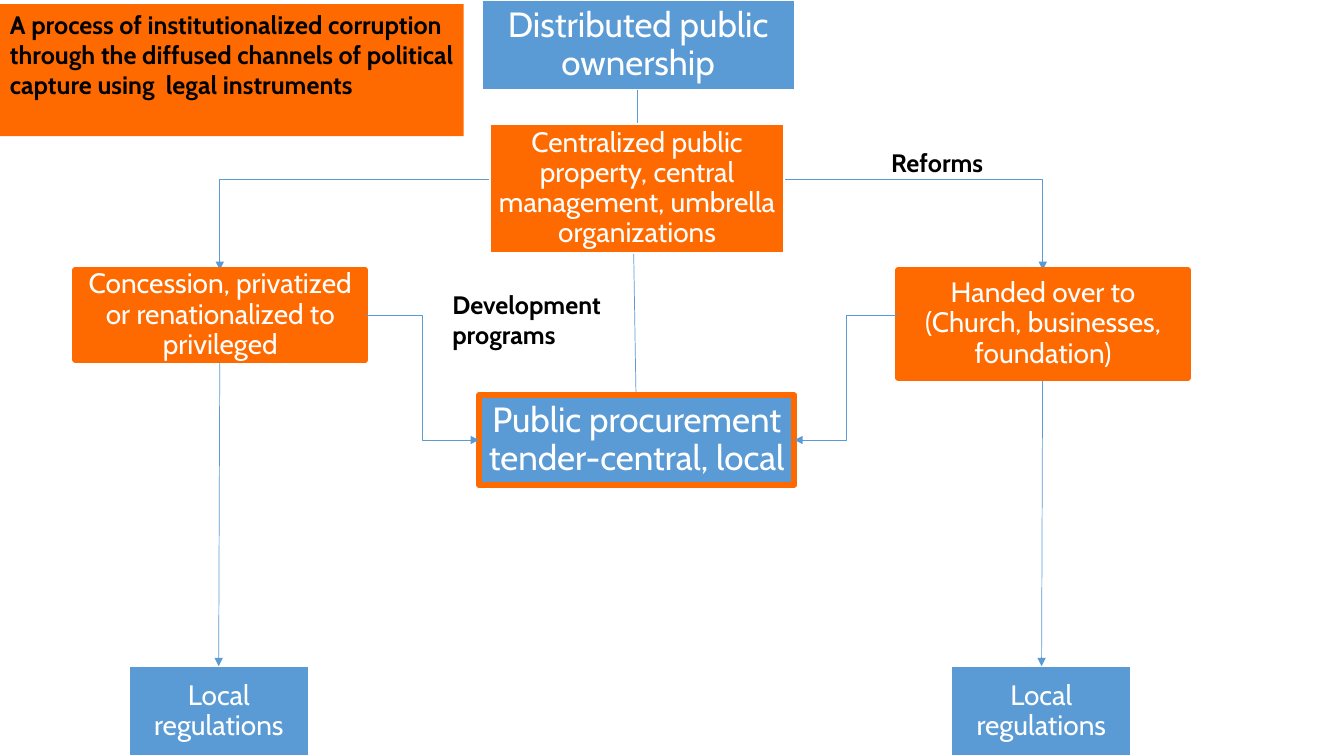
from lxml import etree
from pptx import Presentation
from pptx.dml.color import RGBColor
from pptx.enum.shapes import MSO_CONNECTOR, MSO_SHAPE
from pptx.enum.text import MSO_ANCHOR, PP_ALIGN
from pptx.oxml.ns import qn
from pptx.util import Pt

BLUE = RGBColor(0x5B, 0x9B, 0xD5)
ORANGE = RGBColor(0xFF, 0x6A, 0x00)
WHITE = RGBColor(0xFF, 0xFF, 0xFF)
BLACK = RGBColor(0x00, 0x00, 0x00)
RECTANGLE = MSO_SHAPE.RECTANGLE
STRAIGHT, ELBOW = MSO_CONNECTOR.STRAIGHT, MSO_CONNECTOR.ELBOW
TOP, MIDDLE = MSO_ANCHOR.TOP, MSO_ANCHOR.MIDDLE
LEFT, CENTER = PP_ALIGN.LEFT, PP_ALIGN.CENTER
FONT = "Cabin"

# text, (left, top, width, height), fill, (line colour, line width), text size
BOXES = [
    ("Distributed public ownership", (344.2, 0, 223.2, 64.1), BLUE, (WHITE, 1), 25),
    ("Centralized public property, central management, umbrella organizations",
     (350.1, 88.7, 210, 92), ORANGE, (WHITE, 1), 20),
    ("Concession, privatized or renationalized to privileged",
     (53.8, 192.9, 207.2, 64.1), ORANGE, (ORANGE, 4), 20),
    ("Handed over to (Church, businesses, foundation)",
     (641.5, 192.9, 207.2, 77), ORANGE, (ORANGE, 4), 20),
    ("Public procurement tender-central, local",
     (342.1, 282.3, 225.3, 64.1), BLUE, (ORANGE, 4), 25),
    ("Local regulations", (92.2, 475.9, 128.2, 64.1), BLUE, (WHITE, 1), 20),
    ("Local regulations", (679.7, 475.9, 128.2, 64.1), BLUE, (WHITE, 1), 20),
]

# text, (left, top, width, height), fill
NOTES = [
    ("A process of institutionalized corruption through the diffused channels of "
     "political capture using  legal instruments", (0, 2.9, 331.2, 94.3), ORANGE),
    ("Development programs", (316, 203, 135.4, 51.1), None),
    ("Reforms", (629.5, 101.5, 89.3, 51.1), None),
]

# start, end
DROPS_TO_OWNERS = [((455.4, 64.1), (157, 192.9)), ((455.4, 64.1), (744.8, 192.9))]
DROPS_TO_LOCAL = [((157, 257), (156.2, 475.9)), ((744.8, 257), (744, 475.9))]
TURNS_TO_TENDER = [((261, 225), (342.1, 314.3)), ((641.5, 225), (567.4, 314.3))]
CENTRAL_TO_TENDER = ((452.2, 152.6), (454.3, 282.3))


def write(shape, text, size, color, anchor, align):
    frame = shape.text_frame
    frame.word_wrap = True
    frame.vertical_anchor = anchor
    paragraph = frame.paragraphs[0]
    paragraph.text = text
    paragraph.alignment = align
    font = paragraph.font
    font.name, font.size, font.color.rgb = FONT, Pt(size), color
    return frame, paragraph


def add_box(shapes, text, place, fill, line, size):
    box = shapes.add_shape(RECTANGLE, *map(Pt, place))
    box.shadow.inherit = False
    box.fill.solid()
    box.fill.fore_color.rgb = fill
    box.line.color.rgb, box.line.width = line[0], Pt(line[1])
    frame, paragraph = write(box, text, size, WHITE, MIDDLE, CENTER)
    frame.margin_left = frame.margin_right = Pt(1.25)
    frame.margin_top = frame.margin_bottom = Pt(1.25)
    paragraph.line_spacing = 0.9


def add_note(shapes, text, place, fill):
    note = shapes.add_textbox(*map(Pt, place))
    if fill is not None:
        note.fill.solid()
        note.fill.fore_color.rgb = fill
    _, paragraph = write(note, text, 18, BLACK, TOP, LEFT)
    paragraph.font.bold = True


def add_link(shapes, kind, start, end, arrow=True):
    link = shapes.add_connector(kind, *map(Pt, (*start, *end)))
    link.line.color.rgb, link.line.width = BLUE, Pt(0.5)
    properties = link._element.spPr
    if arrow:
        etree.SubElement(properties.find(qn("a:ln")), qn("a:tailEnd"), type="triangle")
    etree.SubElement(properties, qn("a:effectLst"))
    return link


def add_drop(shapes, start, end):
    """Elbow that leaves and arrives vertically: a quarter-turned horizontal one."""
    (x1, y1), (x2, y2) = start, end
    middle_x, middle_y = (x1 + x2) / 2, (y1 + y2) / 2
    half_width, half_height = (y2 - y1) / 2, abs(x2 - x1) / 2
    degrees = 90
    if x2 > x1:
        half_width, degrees = -half_width, 270
    link = add_link(shapes, ELBOW,
                    (middle_x - half_width, middle_y - half_height),
                    (middle_x + half_width, middle_y + half_height))
    link._element.spPr.find(qn("a:xfrm")).set("rot", str(degrees * 60000))


def main():
    deck = Presentation()
    deck.slide_width, deck.slide_height = Pt(960), Pt(540)
    shapes = deck.slides.add_slide(deck.slide_layouts[6]).shapes

    for start, end in DROPS_TO_OWNERS:
        add_drop(shapes, start, end)
    for start, end in DROPS_TO_LOCAL:
        add_link(shapes, STRAIGHT, start, end)
    add_link(shapes, STRAIGHT, *CENTRAL_TO_TENDER, arrow=False)
    for box in BOXES:
        add_box(shapes, *box)
    for start, end in TURNS_TO_TENDER:
        add_link(shapes, ELBOW, start, end)
    for note in NOTES:
        add_note(shapes, *note)

    deck.save("out.pptx")


if __name__ == "__main__":
    main()
